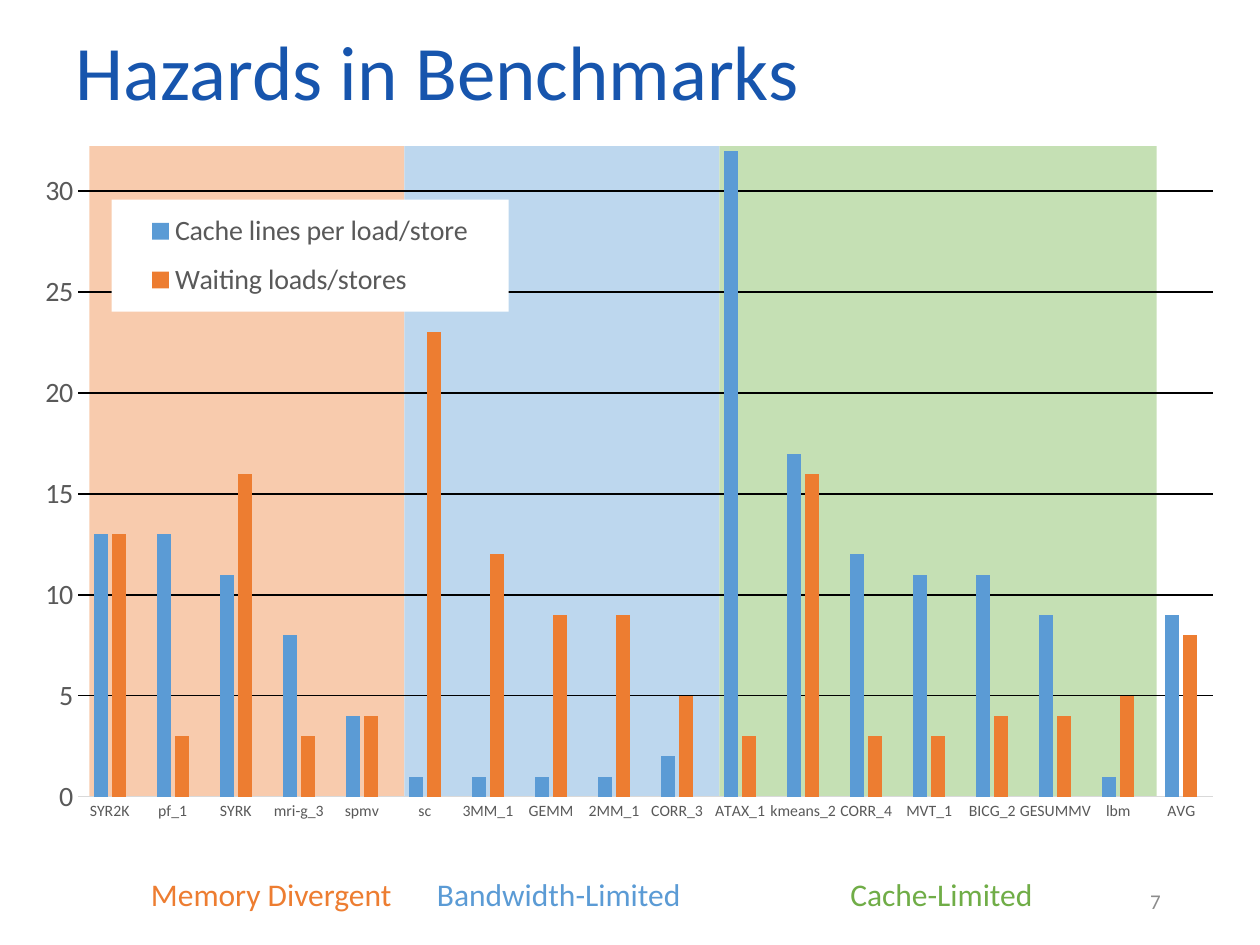
from lxml.etree import fromstring
from pptx import Presentation
from pptx.chart.data import CategoryChartData
from pptx.dml.color import RGBColor
from pptx.enum.chart import XL_CHART_TYPE, XL_LEGEND_POSITION, XL_TICK_MARK
from pptx.enum.shapes import MSO_SHAPE
from pptx.enum.text import MSO_ANCHOR, PP_ALIGN
from pptx.util import Inches, Pt

FONT = "Calibri"
GRAY = "595959"
CHART_NS = "http://schemas.openxmlformats.org/drawingml/2006/chart"
DRAWING_NS = "http://schemas.openxmlformats.org/drawingml/2006/main"

TITLE = "Hazards in Benchmarks"
PAGE_NUMBER = "7"
BENCHMARKS = [  # name, cache lines per load/store, waiting loads/stores
    ("SYR2K", 13, 13), ("pf_1", 13, 3), ("SYRK", 11, 16),
    ("mri-g_3", 8, 3), ("spmv", 4, 4), ("sc", 1, 23),
    ("3MM_1", 1, 12), ("GEMM", 1, 9), ("2MM_1", 1, 9),
    ("CORR_3", 2, 5), ("ATAX_1", 32, 3), ("kmeans_2", 17, 16),
    ("CORR_4", 12, 3), ("MVT_1", 11, 3), ("BICG_2", 11, 4),
    ("GESUMMV", 9, 4), ("lbm", 1, 5), ("AVG", 9, 8),
]
SERIES = [("Cache lines per load/store", "5B9BD5"), ("Waiting loads/stores", "ED7D31")]
GROUPS = [  # label, label left, label colour, band width, band colour
    ("Memory Divergent", 1.1, "ED7D31", 2.5, "F8CBAD"),
    ("Bandwidth-Limited", 3.37, "5B9BD5", 2.5, "BDD7EE"),
    ("Cache-Limited", 6.65, "70AD47", 3.47, "C5E0B4"),
]
BAND_LEFT, BAND_TOP, BAND_HEIGHT = 0.71, 1.16, 5.16
CHART_BOX = (0.26, 0.9, 9.49, 6.45)
PLOT_SHARE = (0.038, 0.046, 0.949, 0.795)
LEGEND_SHARE = (0.066, 0.106, 0.332, 0.138)
LABEL_TOP = 6.95


def color(value):
    return RGBColor.from_string(value)


def inches(box):
    return [Inches(length) for length in box]


def add_text(slide, text, box, size, fill, align=PP_ALIGN.LEFT,
             anchor=MSO_ANCHOR.TOP, line_spacing=None, space_before=0):
    frame = slide.shapes.add_textbox(*inches(box)).text_frame
    frame.word_wrap = True
    frame.vertical_anchor = anchor
    paragraph = frame.paragraphs[0]
    paragraph.alignment = align
    paragraph.space_before = Pt(space_before)
    if line_spacing:
        paragraph.line_spacing = line_spacing
    run = paragraph.add_run()
    run.text = text
    set_font(run.font, size, fill)


def set_font(font, size, fill):
    font.name = FONT
    font.size = Pt(size)
    font.color.rgb = color(fill)


def set_line(line, fill):
    line.color.rgb = color(fill)
    line.width = Pt(0.75)


def chart_element(body):
    """Parse chart XML written with the prefixes c and a."""
    root = fromstring(f'<c:root xmlns:c="{CHART_NS}" xmlns:a="{DRAWING_NS}">{body}</c:root>')
    return root[0]


def shape_properties(fill):
    return chart_element(f"<c:spPr>{fill}<a:ln><a:noFill/></a:ln></c:spPr>")


def set_layout(parent, position, shares, target=""):
    for old in parent.findall(f"{{{CHART_NS}}}layout"):
        parent.remove(old)
    modes = '<c:xMode val="edge"/><c:yMode val="edge"/>'
    sizes = "".join(f'<c:{key} val="{share}"/>' for key, share in zip("xywh", shares))
    parent.insert(position, chart_element(
        f"<c:layout><c:manualLayout>{target}{modes}{sizes}</c:manualLayout></c:layout>"))


def add_bands(slide):
    left = BAND_LEFT
    for _, _, _, width, fill in GROUPS:
        band = slide.shapes.add_shape(
            MSO_SHAPE.ROUNDED_RECTANGLE, *inches((left, BAND_TOP, width, BAND_HEIGHT)))
        band.adjustments[0] = 0
        band.shadow.inherit = False
        band.fill.solid()
        band.fill.fore_color.rgb = color(fill)
        band.line.fill.background()
        left += width


def add_hazard_chart(slide):
    names, *columns = zip(*BENCHMARKS)
    data = CategoryChartData()
    data.categories = names
    for (name, _), values in zip(SERIES, columns):
        data.add_series(name, values)
    chart = slide.shapes.add_chart(
        XL_CHART_TYPE.COLUMN_CLUSTERED, *inches(CHART_BOX), data).chart
    chart.has_title = False
    set_font(chart.font, 10, "000000")

    plot = chart.plots[0]
    plot.gap_width, plot.overlap = 219, -27
    plot.vary_by_categories = False
    for series, (_, fill) in zip(plot.series, SERIES):
        series.format.fill.solid()
        series.format.fill.fore_color.rgb = color(fill)

    for axis, size in ((chart.category_axis, 9), (chart.value_axis, 16)):
        axis.major_tick_mark = axis.minor_tick_mark = XL_TICK_MARK.NONE
        set_font(axis.tick_labels.font, size, GRAY)
    set_line(chart.category_axis.format.line, "D9D9D9")
    values_axis = chart.value_axis
    values_axis.minimum_scale, values_axis.maximum_scale = 0, 32
    values_axis.major_unit = 5
    values_axis.format.line.fill.background()
    set_line(values_axis.major_gridlines.format.line, "000000")
    values_axis.tick_labels.number_format = "General"
    values_axis.tick_labels.number_format_is_linked = False

    chart.has_legend = True
    legend = chart.legend
    legend.position = XL_LEGEND_POSITION.BOTTOM
    legend.include_in_layout = False
    set_font(legend.font, 16, GRAY)

    def find(tag):
        return chart.element.find(f".//{{{CHART_NS}}}{tag}")

    legend_element, plot_area = find("legend"), find("plotArea")
    set_layout(legend_element, 1, LEGEND_SHARE)
    set_layout(plot_area, 0, PLOT_SHARE, '<c:layoutTarget val="inner"/>')
    legend_element.find(f"{{{CHART_NS}}}txPr").addprevious(shape_properties(
        '<a:solidFill><a:srgbClr val="FFFFFF"/></a:solidFill>'))
    plot_area.append(shape_properties("<a:noFill/>"))
    find("chart").addnext(shape_properties("<a:noFill/>"))


def main():
    presentation = Presentation()
    presentation.slide_width, presentation.slide_height = Inches(10), Inches(7.5)
    slide = presentation.slides.add_slide(presentation.slide_layouts[6])
    add_bands(slide)
    add_hazard_chart(slide)
    add_text(slide, PAGE_NUMBER, (7.06, LABEL_TOP, 2.25, 0.4), 12, "8C8C8C",
             align=PP_ALIGN.RIGHT, anchor=MSO_ANCHOR.MIDDLE)
    add_text(slide, TITLE, (0.5, 0.09, 9, 0.92), 44, "1755AD", anchor=MSO_ANCHOR.MIDDLE)
    for label, left, fill, _, _ in GROUPS:
        add_text(slide, label, (left, LABEL_TOP, 2.47, 0.35), 18, fill,
                 line_spacing=0.8, space_before=10)
    presentation.save("out.pptx")


if __name__ == "__main__":
    main()
